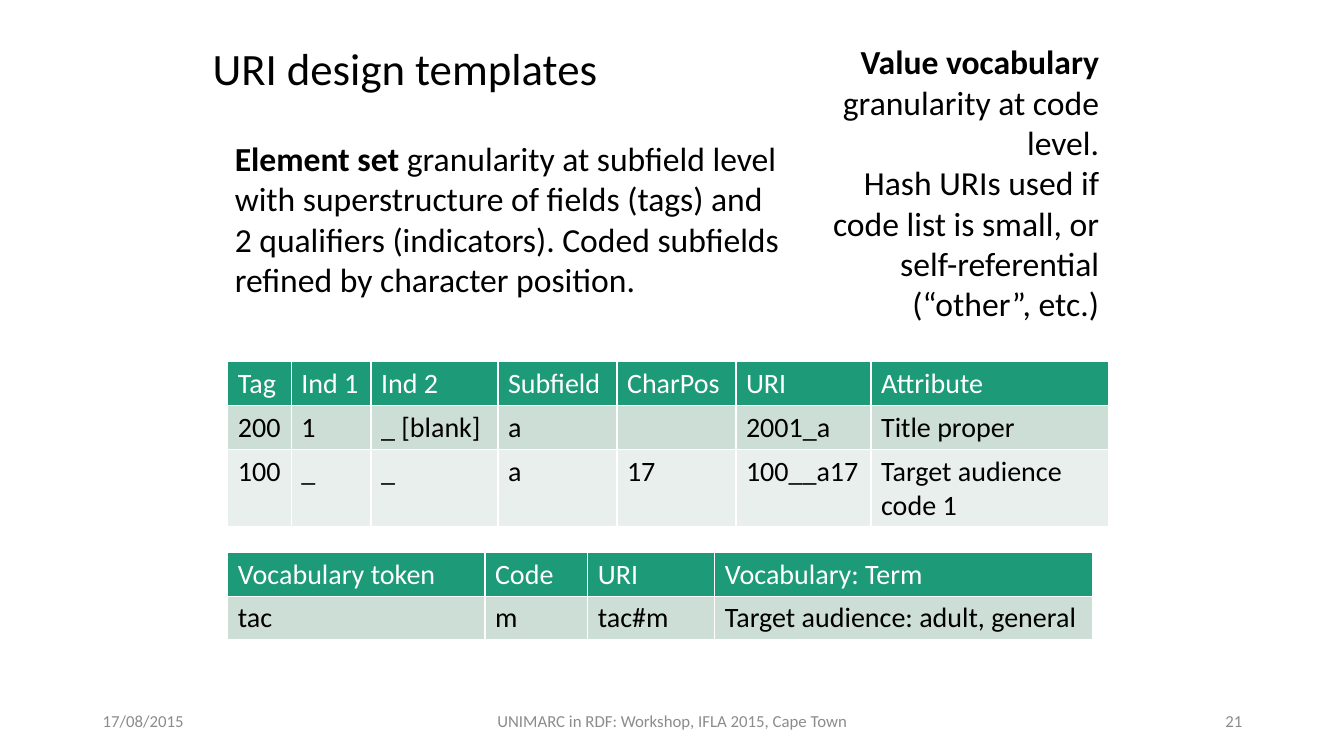
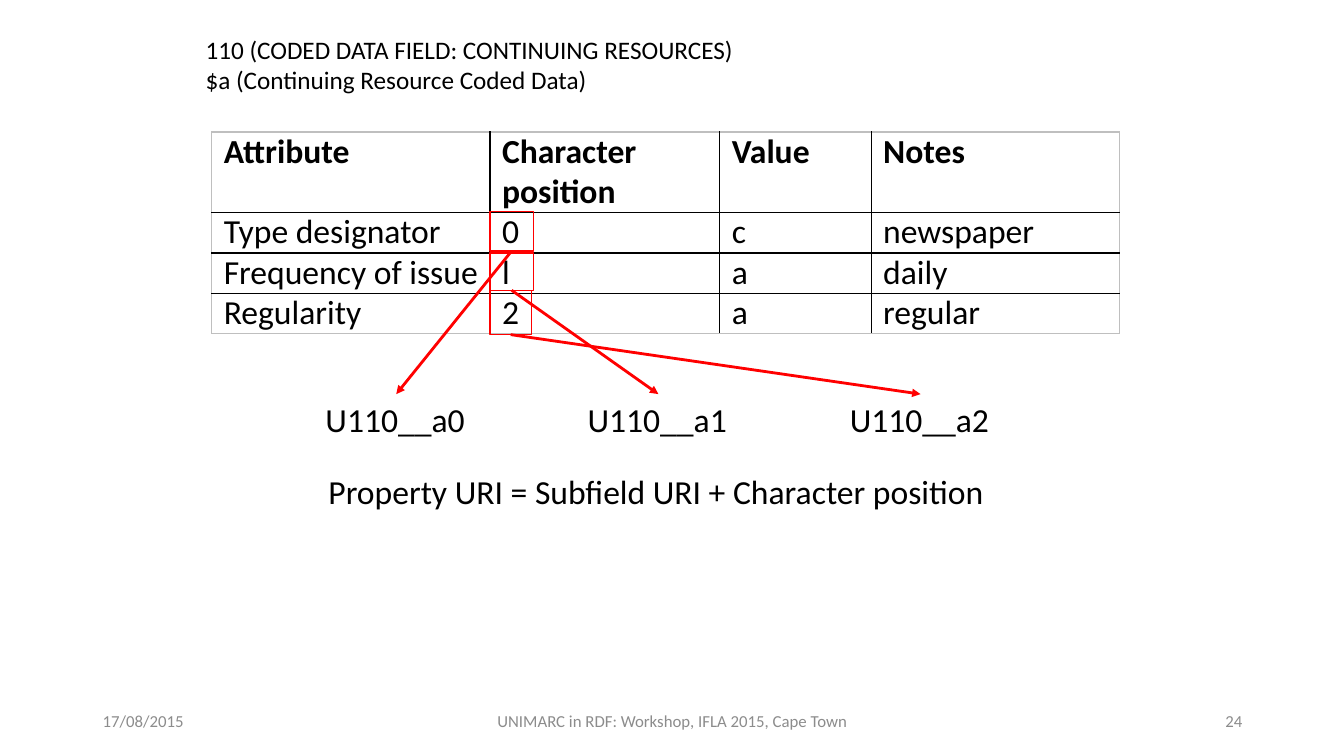
from lxml import etree
from pptx import Presentation
from pptx.dml.color import RGBColor
from pptx.enum.shapes import MSO_CONNECTOR, MSO_SHAPE
from pptx.enum.text import MSO_ANCHOR, PP_ALIGN
from pptx.oxml.ns import qn
from pptx.util import Inches, Pt

LEFT, CENTER, RIGHT = PP_ALIGN.LEFT, PP_ALIGN.CENTER, PP_ALIGN.RIGHT
TOP, MIDDLE = MSO_ANCHOR.TOP, MSO_ANCHOR.MIDDLE
STRAIGHT, RECTANGLE = MSO_CONNECTOR.STRAIGHT, MSO_SHAPE.RECTANGLE
SIDE_TOP, SIDE_BOTTOM = 0, 2

COLORS = {
    "text": "000000",
    "white": "FFFFFF",
    "header": "1D9A78",
    "band_dark": "CDDED6",
    "band_light": "E8EFEC",
    "footer": "8C8C8C",
    "accent": "FF0000",
    "rule": "000000",
    "frame": "BFBFBF",
}
FONT = "Calibri"
FOOTER_TOP, FOOTER_HEIGHT = 6.95, 0.4


def color(name):
    return RGBColor.from_string(COLORS[name])


class Deck:
    """Holds the shared style and the current page."""

    def __init__(self):
        self.deck = Presentation()
        self.deck.slide_width = Inches(13.33)
        self.deck.slide_height = Inches(7.5)
        self.page = None

    def add_page(self, number):
        self.page = self.deck.slides.add_slide(self.deck.slide_layouts[6])
        footers = [
            (0.92, 3, "17/08/2015", LEFT),
            (4.42, 4.5, "UNIMARC in RDF: Workshop, IFLA 2015, Cape Town", CENTER),
            (9.42, 3, str(number), RIGHT),
        ]
        for left, width, words, align in footers:
            self.text((left, FOOTER_TOP, width, FOOTER_HEIGHT), [words], 12,
                      "footer", align, anchor=MIDDLE)

    def fill_text(self, frame, paragraphs, size, ink="text", align=LEFT,
                  bold=False, spacing=None):
        """A paragraph is a string or a list of (words, bold) spans."""
        for index, content in enumerate(paragraphs):
            para = frame.add_paragraph() if index else frame.paragraphs[0]
            para.alignment = align
            para.line_spacing = spacing
            spans = [(content, bold)] if isinstance(content, str) else content
            for words, is_bold in spans:
                span = para.add_run()
                span.text = words
                span.font.color.rgb = color(ink)
                style = {"name": FONT, "size": Pt(size), "bold": is_bold}
                for key, value in style.items():
                    setattr(span.font, key, value)

    def text(self, at, paragraphs, size, ink="text", align=LEFT,
             anchor=TOP, wrap=True):
        box = self.page.shapes.add_textbox(*map(Inches, at))
        box.text_frame.word_wrap = wrap
        box.text_frame.vertical_anchor = anchor
        self.fill_text(box.text_frame, paragraphs, size, ink, align)
        return box

    def grid(self, left, top, widths, heights, rows):
        """Adds a table and yields each cell with its place and words."""
        holder = self.page.shapes.add_table(
            len(rows), len(widths), Inches(left), Inches(top),
            Inches(sum(widths)), Inches(sum(heights)))
        table = holder.table
        table.first_row = table.horz_banding = False
        for column, width in zip(table.columns, widths):
            column.width = Inches(width)
        for line, height in zip(table.rows, heights):
            line.height = Inches(height)
        for row, values in enumerate(rows):
            for col, words in enumerate(values):
                yield table.cell(row, col), row, col, words

    def borders(self, cell, inks):
        """Draws 1 pt borders; inks are named for left, right, top, bottom."""
        properties = cell._tc.get_or_add_tcPr()
        for side, ink in zip("LRTB", inks):
            line = etree.SubElement(properties, qn(f"a:ln{side}"), w=str(Pt(1)))
            fill = etree.SubElement(line, qn("a:solidFill"))
            etree.SubElement(fill, qn("a:srgbClr"), val=COLORS[ink])

    def banded_table(self, left, top, widths, heights, rows):
        fills = ["header", "band_dark", "band_light"]
        for cell, row, _, words in self.grid(left, top, widths, heights, rows):
            self.borders(cell, ["white"] * 4)
            cell.fill.solid()
            cell.fill.fore_color.rgb = color(fills[row])
            self.fill_text(cell.text_frame, [words], 20,
                           "text" if row else "white")

    def ruled_table(self, left, top, widths, heights, rows):
        last_row, last_col = len(rows) - 1, len(widths) - 1
        margins = {"margin_left": Inches(0.12), "margin_right": 0,
                   "margin_top": 0, "margin_bottom": 0}
        for cell, row, col, words in self.grid(left, top, widths, heights, rows):
            outer = [col == 0, col == last_col, row == 0, row == last_row]
            self.borders(cell, ["frame" if edge else "rule" for edge in outer])
            cell.fill.background()
            for key, value in margins.items():
                setattr(cell, key, value)
            self.fill_text(cell.text_frame, [words], 24, bold=row == 0,
                           spacing=Pt(28.8))

    def outline(self, at):
        box = self.page.shapes.add_shape(RECTANGLE, *map(Inches, at))
        box.shadow.inherit = False
        box.fill.background()
        box.line.color.rgb = color("accent")
        box.line.width = Pt(1)
        return box

    def arrow(self, source, target):
        """Runs from the bottom of source to the top of target."""
        link = self.page.shapes.add_connector(STRAIGHT, 0, 0, 0, 0)
        link.begin_connect(source, SIDE_BOTTOM)
        link.end_connect(target, SIDE_TOP)
        link.line.color.rgb = color("accent")
        link.line.width = Pt(2)
        etree.SubElement(link.line._get_or_add_ln(), qn("a:tailEnd"),
                         type="triangle")
        etree.SubElement(link._element.spPr, qn("a:effectLst"))


def add_templates_page(deck):
    deck.add_page(21)
    deck.text((2.01, 0.36, 4.06, 0.64), ["URI design templates"], 32, wrap=False)
    deck.text((2.23, 1.32, 5.62, 1.72), [[
        ("Element set ", True),
        ("granularity at subfield level with superstructure of fields (tags) "
         "and 2 qualifiers (indicators). Coded subfields refined by character "
         "position.", False),
    ]], 24)
    deck.text((8.16, 0.36, 2.84, 2.93), [
        [("Value vocabulary ", True), ("granularity at code level.", False)],
        "Hash URIs used if code list is small, or self-referential "
        "(“other”, etc.)",
    ], 24, align=RIGHT)

    # Element set and value vocabulary examples
    deck.banded_table(
        2.26, 3.59, [0.63, 0.79, 1.26, 1.18, 1.18, 1.34, 2.36],
        [0.43, 0.43, 0.77], [
            ["Tag", "Ind 1", "Ind 2", "Subfield", "CharPos", "URI", "Attribute"],
            ["200", "1", "_ [blank]", "a", "", "2001_a", "Title proper"],
            ["100", "_", "_", "a", "17", "100__a17", "Target audience code 1"],
        ])
    deck.banded_table(2.26, 5.48, [2.55, 1.02, 1.26, 3.75], [0.43, 0.43], [
        ["Vocabulary token", "Code", "URI", "Vocabulary: Term"],
        ["tac", "m", "tac#m", "Target audience: adult, general"],
    ])


def add_coded_field_page(deck):
    deck.add_page(24)
    deck.text((1.94, 0.29, 5.59, 0.71), [
        "110 (CODED DATA FIELD: CONTINUING RESOURCES)",
        "$a (Continuing Resource Coded Data)",
    ], 18)
    deck.ruled_table(2.1, 1.31, [2.76, 2.28, 1.5, 2.46], [0.8, 0.4, 0.4, 0.4], [
        ["Attribute", "Character position", "Value", "Notes"],
        ["Type designator", "0", "c", "newspaper"],
        ["Frequency of issue", "l", "a", "daily"],
        ["Regularity", "2", "a", "regular"],
    ])

    # Each marked character position leads to its property
    marks = [(2.1, 0.43, 0.39), (2.51, 0.43, 0.37), (2.88, 0.41, 0.44)]
    for index, (top, width, height) in enumerate(marks):
        label = deck.text((3.13 + 2.6 * index, 3.91, 1.6, 0.5),
                          [f"U110__a{index}"], 24, wrap=False)
        deck.arrow(deck.outline((4.86, top, width, height)), label)
    deck.text((3.16, 4.62, 6.76, 0.5),
              ["Property URI = Subfield URI + Character position"], 24, wrap=False)


def main():
    deck = Deck()
    add_templates_page(deck)
    add_coded_field_page(deck)
    deck.deck.save("out.pptx")


if __name__ == "__main__":
    main()
